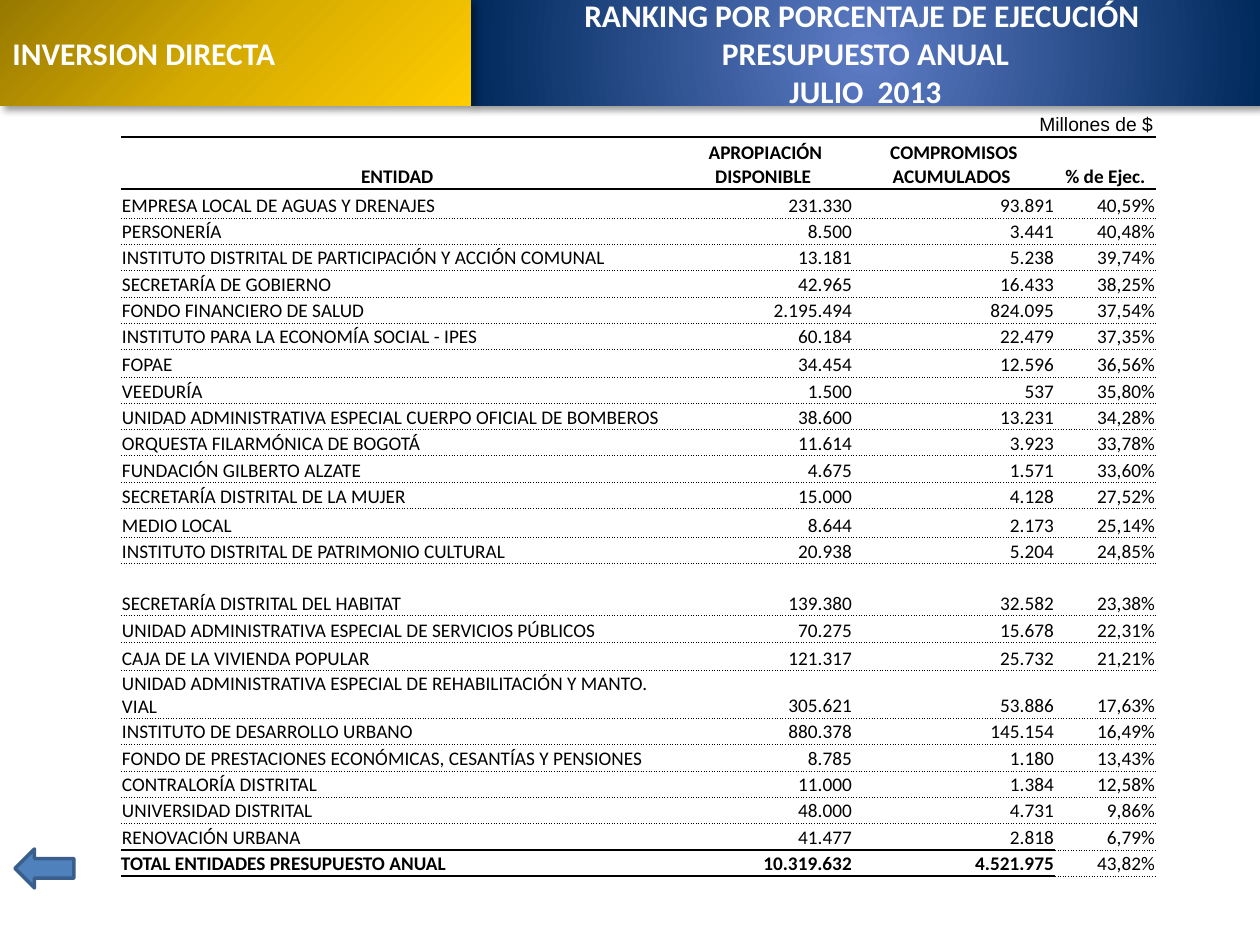
from dataclasses import dataclass
from itertools import cycle

from lxml import etree
from pptx import Presentation
from pptx.dml.color import RGBColor
from pptx.enum.shapes import MSO_SHAPE
from pptx.enum.text import MSO_ANCHOR, MSO_AUTO_SIZE, PP_ALIGN
from pptx.oxml.ns import qn
from pptx.util import Emu, Pt

RECTANGLE, LEFT_ARROW = MSO_SHAPE.RECTANGLE, MSO_SHAPE.LEFT_ARROW
LEFT, CENTER, RIGHT = PP_ALIGN.LEFT, PP_ALIGN.CENTER, PP_ALIGN.RIGHT
MIDDLE, BOTTOM = MSO_ANCHOR.MIDDLE, MSO_ANCHOR.BOTTOM
FIT_SHAPE = MSO_AUTO_SIZE.SHAPE_TO_FIT_TEXT
PX_PER_INCH = 126


@dataclass(frozen=True)
class Theme:
    heading_font: str = "Calibri"
    note_font: str = "Arial"
    heading_size: int = 18
    body_size: int = 11
    black: str = "000000"
    white: str = "FFFFFF"
    arrow_fill: str = "4F81BD"
    arrow_line: str = "3A5F8C"
    blue_stops: tuple = ((0, "5E7CC5"), (100, "00295C"))
    gold_stops: tuple = ((0, "977900"), (50, "D7AC00"), (100, "FFCC00"))


def px(value):
    return Emu(round(value * 914400 / PX_PER_INCH))


def add_element(parent, tag, **attributes):
    values = {name: str(value) for name, value in attributes.items()}
    return etree.SubElement(parent, qn(tag), values)


class SlideBuilder:
    def __init__(self, slide, theme):
        self.slide = slide
        self.theme = theme

    def format_text(self, text_frame, align, size, bold=False, color=None, font=None):
        for paragraph in text_frame.paragraphs:
            paragraph.alignment = align
            for run in paragraph.runs:
                run.font.name = font or self.theme.heading_font
                run.font.size = Pt(size)
                run.font.bold = bold
                run.font.color.rgb = RGBColor.from_string(color or self.theme.black)

    def banner(self, box, text, align, stops, focus):
        shape = self.slide.shapes.add_shape(RECTANGLE, *map(px, box))
        shape.line.fill.background()
        properties = shape._element.spPr
        # Radial gradient, placed before the line element
        gradient = etree.Element(qn("a:gradFill"), rotWithShape="1")
        stop_list = add_element(gradient, "a:gsLst")
        for position, color in stops:
            stop = add_element(stop_list, "a:gs", pos=position * 1000)
            add_element(stop, "a:srgbClr", val=color)
        radial = add_element(gradient, "a:path", path="circle")
        sides = {side: amount * 1000 for side, amount in zip("ltrb", focus)}
        add_element(radial, "a:fillToRect", **sides)
        properties.find(qn("a:ln")).addprevious(gradient)
        # Soft shadow
        effects = add_element(properties, "a:effectLst")
        shadow = add_element(effects, "a:outerShdw", blurRad=Pt(4), dist=Pt(3),
                             dir=45 * 60000, algn="tl", rotWithShape=0)
        shadow_color = add_element(shadow, "a:srgbClr", val=self.theme.black)
        add_element(shadow_color, "a:alpha", val=40000)
        text_frame = shape.text_frame
        text_frame.text = text
        text_frame.vertical_anchor = MIDDLE
        self.format_text(text_frame, align, self.theme.heading_size, True, self.theme.white)

    def arrow(self, box):
        shape = self.slide.shapes.add_shape(LEFT_ARROW, *map(px, box))
        shape.shadow.inherit = False
        shape.fill.solid()
        shape.fill.fore_color.rgb = RGBColor.from_string(self.theme.arrow_fill)
        shape.line.color.rgb = RGBColor.from_string(self.theme.arrow_line)
        shape.line.width = Pt(2)

    def note(self, box, text):
        text_frame = self.slide.shapes.add_textbox(*map(px, box)).text_frame
        text_frame.text = text
        text_frame.word_wrap = False
        text_frame.auto_size = FIT_SHAPE
        self.format_text(text_frame, LEFT, self.theme.body_size, font=self.theme.note_font)

    def cell(self, cell, text, align, bold, margin, top, bottom):
        cell.text = text
        cell.vertical_anchor = BOTTOM
        cell.margin_left = cell.margin_right = cell.margin_top = px(margin)
        cell.margin_bottom = 0
        cell.fill.solid()
        cell.fill.fore_color.rgb = RGBColor.from_string(self.theme.white)
        self.format_text(cell.text_frame, align, self.theme.body_size, bold)
        # A zero width means no border; half-point borders are dotted
        borders = (("a:lnL", 0), ("a:lnR", 0), ("a:lnT", top), ("a:lnB", bottom))
        for index, (tag, width) in enumerate(borders):
            line = etree.Element(qn(tag), w=str(Pt(width)))
            if width:
                fill = add_element(line, "a:solidFill")
                add_element(fill, "a:srgbClr", val=self.theme.black)
                add_element(line, "a:prstDash", val="sysDot" if width < 1 else "solid")
            else:
                add_element(line, "a:noFill")
            cell._tc.get_or_add_tcPr().insert(index, line)

    def table(self, box, rows, widths, heights):
        frame = self.slide.shapes.add_table(len(rows), len(widths), *map(px, box))
        table = frame.table
        table.first_row = table.horz_banding = False
        for column, width in zip(table.columns, widths):
            column.width = px(width)
        for row, height in zip(table.rows, heights):
            row.height = px(height)
        frame.height = px(box[3])
        last_row, last_column = len(rows) - 1, len(widths) - 1
        # Border above each row, then the one below the last row
        rules = [1.5, 1] + [0.5] * (last_row - 2) + [1, 1]
        for row_index, values in enumerate(rows):
            header, total = row_index == 0, row_index == last_row
            for column_index, text in enumerate(values):
                top, bottom = rules[row_index:row_index + 2]
                share = column_index == last_column
                if share and row_index >= last_row - 1:
                    top = bottom = 0.5
                align = CENTER if header else RIGHT if column_index else LEFT
                bold = header or (total and not share)
                margin = 0 if header or (total and column_index == 0) else 1
                self.cell(table.cell(row_index, column_index), text, align, bold,
                          margin, top, bottom)


ROWS = [
    ("ENTIDAD ", "APROPIACIÓN DISPONIBLE ", "COMPROMISOS ACUMULADOS ", "% de Ejec."),
    ("EMPRESA LOCAL DE AGUAS Y DRENAJES", "231.330", "93.891", "40,59%"),
    ("PERSONERÍA", "8.500", "3.441", "40,48%"),
    ("INSTITUTO DISTRITAL DE PARTICIPACIÓN Y ACCIÓN COMUNAL", "13.181", "5.238", "39,74%"),
    ("SECRETARÍA DE GOBIERNO", "42.965", "16.433", "38,25%"),
    ("FONDO FINANCIERO DE SALUD", "2.195.494", "824.095", "37,54%"),
    ("INSTITUTO PARA LA ECONOMÍA SOCIAL - IPES", "60.184", "22.479", "37,35%"),
    ("FOPAE", "34.454", "12.596", "36,56%"),
    ("VEEDURÍA", "1.500", "537", "35,80%"),
    ("UNIDAD ADMINISTRATIVA ESPECIAL CUERPO OFICIAL DE BOMBEROS", "38.600", "13.231", "34,28%"),
    ("ORQUESTA FILARMÓNICA DE BOGOTÁ", "11.614", "3.923", "33,78%"),
    ("FUNDACIÓN GILBERTO ALZATE", "4.675", "1.571", "33,60%"),
    ("SECRETARÍA DISTRITAL DE LA MUJER", "15.000", "4.128", "27,52%"),
    ("MEDIO LOCAL", "8.644", "2.173", "25,14%"),
    ("INSTITUTO DISTRITAL DE PATRIMONIO CULTURAL", "20.938", "5.204", "24,85%"),
    ("SECRETARÍA DISTRITAL DEL HABITAT", "139.380", "32.582", "23,38%"),
    ("UNIDAD ADMINISTRATIVA ESPECIAL DE SERVICIOS PÚBLICOS", "70.275", "15.678", "22,31%"),
    ("CAJA DE LA VIVIENDA POPULAR", "121.317", "25.732", "21,21%"),
    ("UNIDAD ADMINISTRATIVA ESPECIAL DE REHABILITACIÓN Y MANTO. VIAL",
     "305.621", "53.886", "17,63%"),
    ("INSTITUTO DE DESARROLLO URBANO", "880.378", "145.154", "16,49%"),
    ("FONDO DE PRESTACIONES ECONÓMICAS, CESANTÍAS Y PENSIONES", "8.785", "1.180", "13,43%"),
    ("CONTRALORÍA DISTRITAL", "11.000", "1.384", "12,58%"),
    ("UNIVERSIDAD DISTRITAL", "48.000", "4.731", "9,86%"),
    ("RENOVACIÓN URBANA", "41.477", "2.818", "6,79%"),
    ("TOTAL ENTIDADES PRESUPUESTO ANUAL", "10.319.632", "4.521.975", "43,82%"),
]
COLUMN_WIDTHS = (557, 175, 202, 101)
SPECIAL_HEIGHTS = {0: 52, 1: 29, 7: 28, 13: 29, 15: 52, 17: 28}


def main():
    presentation = Presentation()
    presentation.slide_width, presentation.slide_height = px(1260), px(945)
    slide = presentation.slides.add_slide(presentation.slide_layouts[6])
    theme = Theme()
    builder = SlideBuilder(slide, theme)

    # Heading banners
    title = "RANKING POR PORCENTAJE DE EJECUCIÓN \nPRESUPUESTO ANUAL\nJULIO  2013"
    builder.banner((471, 0, 789, 106), title, CENTER, theme.blue_stops, (50, 50, 50, 50))
    builder.banner((0, 0, 471, 106), "INVERSION DIRECTA", LEFT, theme.gold_stops,
                   (0, 0, 100, 100))

    # Back arrow and unit note
    builder.arrow((15, 849, 59, 39))
    builder.note((1027, 106, 140, 37), "Millones de $")

    # Ranking table: ordinary rows average a little over 26 px
    ordinary = cycle((26, 26, 27))
    heights = [SPECIAL_HEIGHTS.get(index) or next(ordinary) for index in range(len(ROWS))]
    builder.table((121, 137, sum(COLUMN_WIDTHS), 742), ROWS, COLUMN_WIDTHS, heights)

    presentation.save("out.pptx")


if __name__ == "__main__":
    main()
